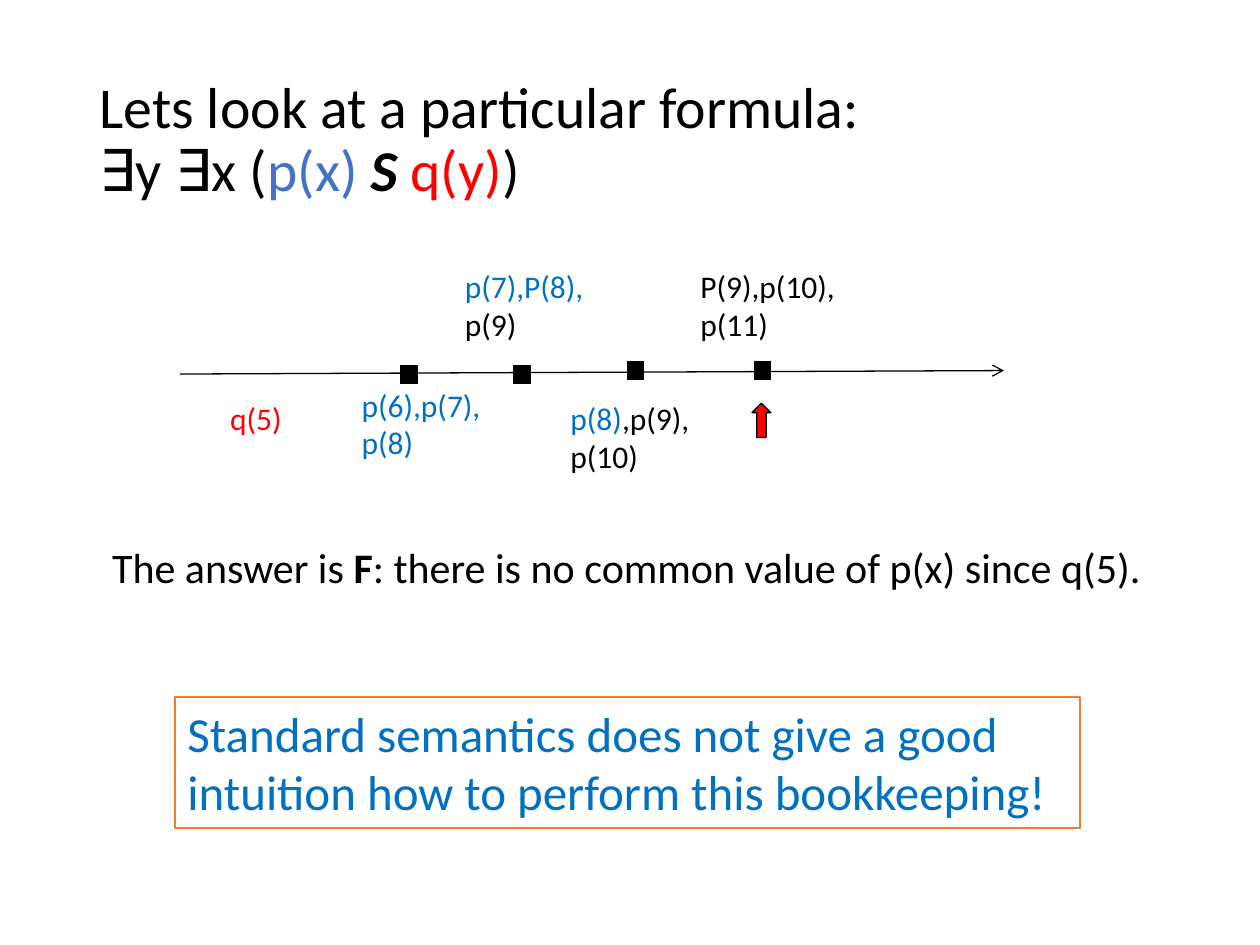
from lxml import etree
from pptx import Presentation
from pptx.dml.color import RGBColor
from pptx.enum import shapes, text
from pptx.oxml import ns
from pptx.util import Cm, Pt

BLACK = RGBColor(0x00, 0x00, 0x00)
WHITE = RGBColor(0xFF, 0xFF, 0xFF)
BLUE = RGBColor(0x00, 0x70, 0xC0)
INDIGO = RGBColor(0x44, 0x72, 0xC4)
RED = RGBColor(0xFF, 0x00, 0x00)
ORANGE = RGBColor(0xED, 0x7D, 0x31)


def write(para, parts, size):
    para.alignment = text.PP_ALIGN.LEFT
    for words, color, *style in parts:
        run = para.add_run()
        run.text = words
        font = run.font
        font.name, font.size = "Calibri", Pt(size)
        font.color.rgb = color
        font.bold = "bold" in style
        font.italic = "italic" in style


def add_title(slide):
    title = slide.shapes.title
    title.left, title.top = Cm(1.75), Cm(1.01)
    title.width, title.height = Cm(21.9), Cm(3.68)
    frame = title.text_frame
    frame.auto_size = text.MSO_AUTO_SIZE.NONE
    frame.vertical_anchor = text.MSO_ANCHOR.MIDDLE
    para = frame.paragraphs[0]
    para.line_spacing = 0.9
    write(para, [("Lets look at a particular formula:", BLACK)], 33)
    para.add_line_break()
    write(para, [("∃y ∃x (", BLACK), ("p(x) ", INDIGO),
                 ("S ", BLACK, "bold", "italic"),
                 ("q(y)", RED), (")", BLACK)], 33)


def add_label(slide, left, top, width, height, parts, size=18):
    box = slide.shapes.add_textbox(Cm(left), Cm(top), Cm(width), Cm(height))
    box.text_frame.word_wrap = True
    write(box.text_frame.paragraphs[0], parts, size)


def add_block(slide, kind, left, top, width, height, fill, line=BLACK, weight=0.75):
    block = slide.shapes.add_shape(kind, Cm(left), Cm(top), Cm(width), Cm(height))
    block.shadow.inherit = False
    block.fill.solid()
    block.fill.fore_color.rgb = fill
    block.line.color.rgb = line
    block.line.width = Pt(weight)
    return block


def add_axis(slide):
    axis = slide.shapes.add_connector(
        shapes.MSO_CONNECTOR.STRAIGHT, Cm(3.63), Cm(7.54), Cm(20.24), Cm(7.47))
    axis.line.color.rgb = BLACK
    axis.line.width = Pt(0.75)
    etree.SubElement(axis.line._get_or_add_ln(), ns.qn("a:tailEnd"), type="arrow")
    etree.SubElement(axis._element.spPr, ns.qn("a:effectLst"))


def add_note(slide):
    note = add_block(slide, shapes.MSO_SHAPE.RECTANGLE,
                     3.53, 14.05, 18.24, 2.64, WHITE, ORANGE, 1)
    frame = note.text_frame
    frame.word_wrap = True
    frame.vertical_anchor = text.MSO_ANCHOR.TOP
    write(frame.paragraphs[0], [(
        "Standard semantics does not give a good intuition "
        "how to perform this bookkeeping!", BLUE)], 28)


def main():
    deck = Presentation()
    deck.slide_width, deck.slide_height = Cm(25.4), Cm(19.05)
    slide = deck.slides.add_slide(deck.slide_layouts[5])
    add_title(slide)
    add_axis(slide)
    for left, top in [(8.08, 7.37), (10.36, 7.37), (12.65, 7.29), (15.21, 7.29)]:
        add_block(slide, shapes.MSO_SHAPE.RECTANGLE, left, top, 0.33, 0.36, BLACK)
    labels = [
        (7.04, 7.65, 3.12, [("p(6),p(7),p(8)", BLUE)]),
        (9.12, 5.26, 3.12, [("p(7),P(8),", BLUE), ("p(9)", BLACK)]),
        (11.25, 7.92, 3.12, [("p(8)", BLUE), (",p(9),p(10)", BLACK)]),
        (13.87, 5.26, 3.38, [("P(9),p(10),p(11)", BLACK)]),
    ]
    for left, top, width, parts in labels:
        add_label(slide, left, top, width, 1.8, parts)
    add_label(slide, 4.39, 7.92, 1.85, 1.02, [("q(5)", RED)])
    add_label(slide, 2.01, 10.8, 21.97, 1.27, [
        ("The answer is ", BLACK), ("F", BLACK, "bold"),
        (": there is no common value of p(x) since q(5).", BLACK)], 24)
    add_block(slide, shapes.MSO_SHAPE.UP_ARROW, 15.16, 8.13, 0.38, 0.69, RED)
    add_note(slide)
    deck.save("out.pptx")


if __name__ == "__main__":
    main()
